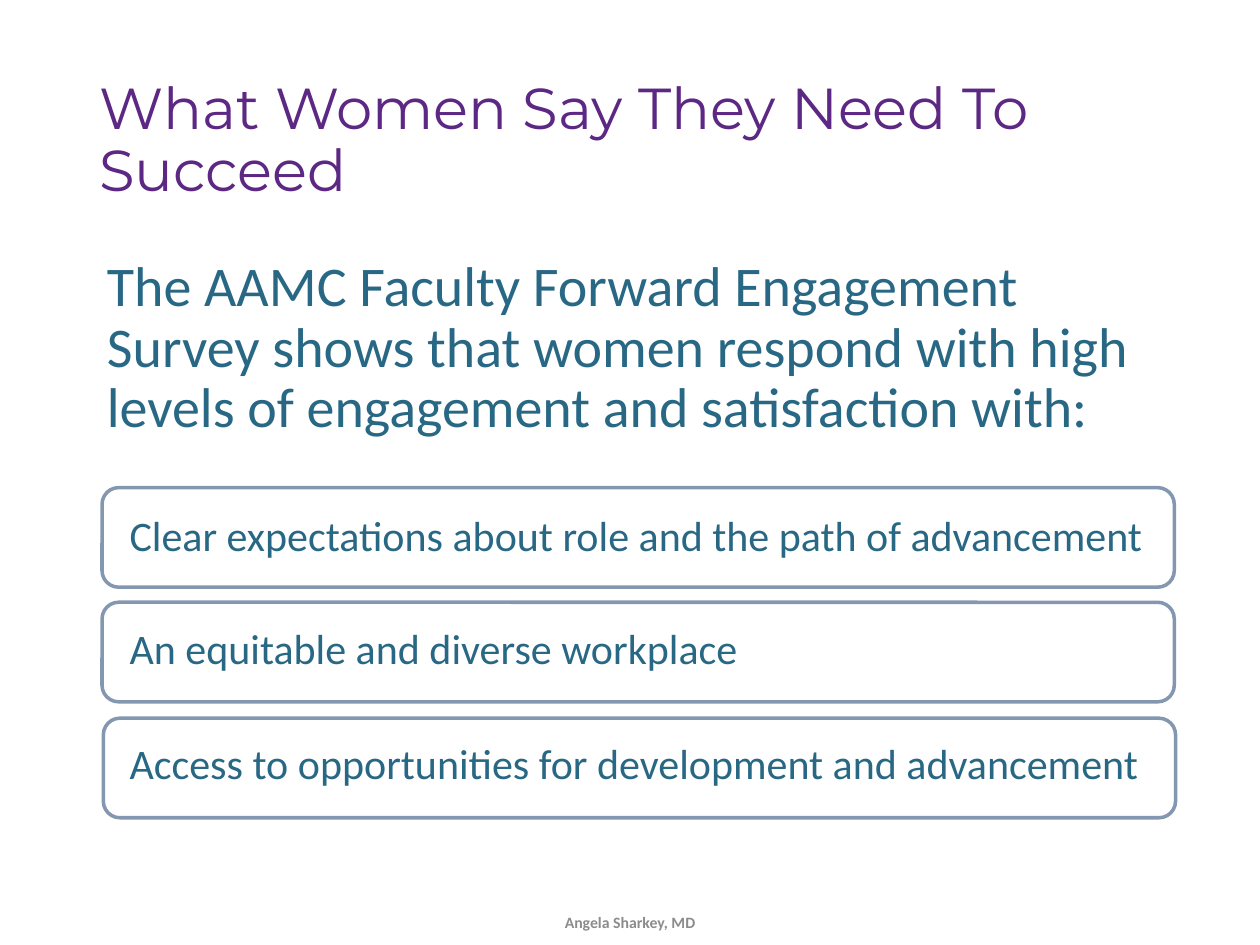
import pptx
import pptx.util
import pptx.dml.color
import pptx.enum.shapes
import pptx.enum.text

Inches = pptx.util.Inches
Pt = pptx.util.Pt
Anchor = pptx.enum.text.MSO_ANCHOR
Align = pptx.enum.text.PP_ALIGN


def tint(code):
    return pptx.dml.color.RGBColor.from_string(code)


def write(text, place, font, code, para, anchor=Anchor.TOP):
    box = slide.shapes.add_textbox(*map(Inches, place)).text_frame
    box.word_wrap = True
    box.vertical_anchor = anchor
    line = box.paragraphs[0]
    line.text = text
    for part, form in ((line, para), (line.font, font)):
        for key, value in form.items():
            setattr(part, key, value)
    line.font.color.rgb = tint(code)


deck = pptx.Presentation()
deck.slide_width = Inches(10)
deck.slide_height = Inches(7.5)
slide = deck.slides.add_slide(deck.slide_layouts[6])

teal = "286884"
tight = {"line_spacing": 0.9}

write("What Women Say They Need To Succeed", (0.69, 0.4, 8.62, 1.45),
      {"name": "Montserrat", "size": Pt(33)}, "5D2884", tight, Anchor.MIDDLE)
write("The AAMC Faculty Forward Engagement Survey shows that women respond "
      "with high levels of engagement and satisfaction with:",
      (0.75, 2, 8.62, 1.67), {"name": "Calibri", "size": Pt(32)}, teal, tight)

needs = [
    (0.81, 3.87, 4.04, "Clear expectations about role and the path of advancement"),
    (0.81, 4.78, 4.94, "An equitable and diverse workplace"),
    (0.82, 5.7, 5.85, "Access to opportunities for development and advancement"),
]
for left, top, base, need in needs:
    card = slide.shapes.add_shape(
        pptx.enum.shapes.MSO_SHAPE.ROUNDED_RECTANGLE,
        Inches(left), Inches(top), Inches(8.51), Inches(0.79))
    card.shadow.inherit = False
    card.fill.background()
    card.line.color.rgb = tint("8497B0")
    card.line.width = Pt(2)
    write(need, (0.93, base, 8.38, 0.54),
          {"name": "Calibri", "size": Pt(24)}, teal, tight)

write("Angela Sharkey, MD", (4.25, 7.19, 1.5, 0.25),
      {"name": "Calibri", "size": Pt(9), "bold": True}, "8C8C8C",
      {"alignment": Align.CENTER}, Anchor.BOTTOM)

deck.save("out.pptx")
